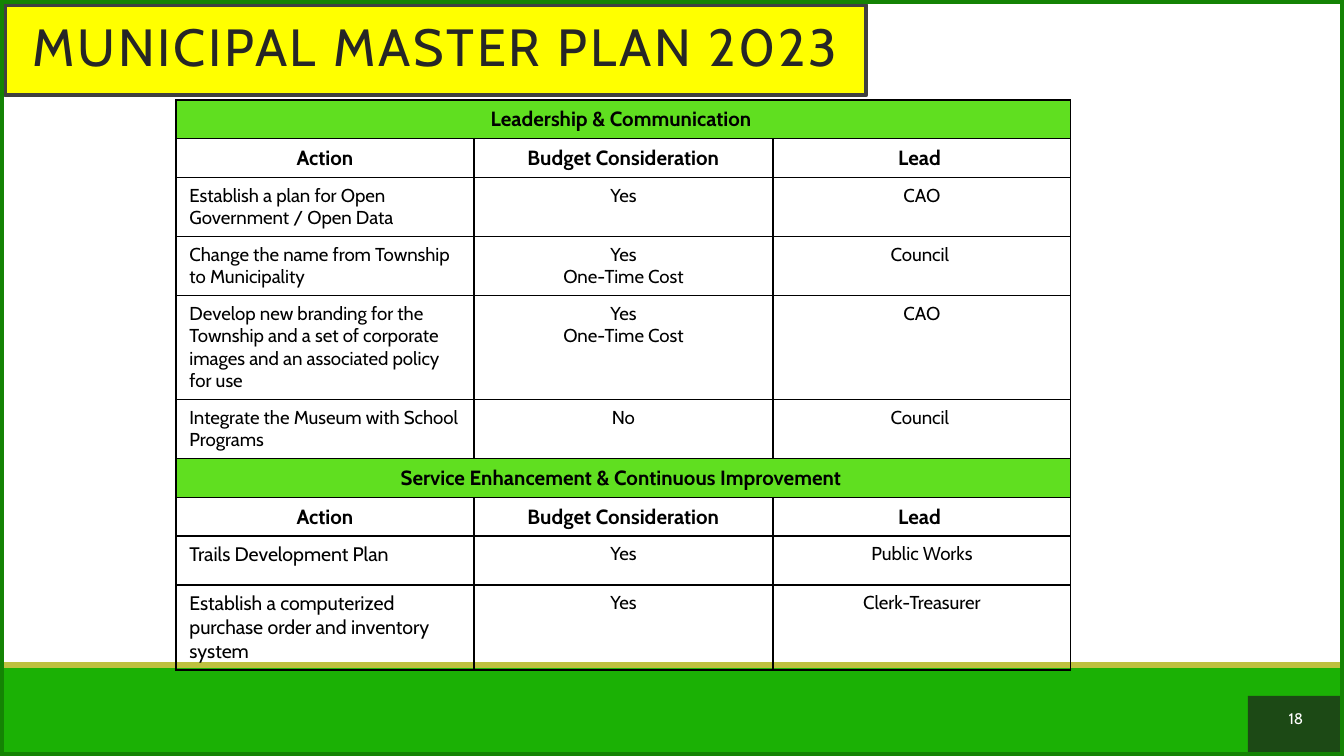
from lxml import etree
from pptx import Presentation
from pptx.dml.color import RGBColor
from pptx.enum.shapes import MSO_CONNECTOR, MSO_SHAPE
from pptx.enum.text import MSO_ANCHOR, PP_ALIGN
from pptx.oxml.ns import qn
from pptx.util import Emu, Pt

RECT = MSO_SHAPE.RECTANGLE
STRAIGHT = MSO_CONNECTOR.STRAIGHT
LEFT, CENTER = PP_ALIGN.LEFT, PP_ALIGN.CENTER
TOP, MIDDLE = MSO_ANCHOR.TOP, MSO_ANCHOR.MIDDLE

W, H = 1344, 756
INSET = 13
FONT = "Cabin"
BLACK, WHITE, BAND = "000000", "FFFFFF", "60DF20"

COL_WIDTHS = [298, 299, 298]
ROW_HEIGHTS = [38, 39, 58, 59, 104, 59, 39, 38, 49, 85]
HEADINGS = ["Action", "Budget Consideration", "Lead "]
# Each section: title, size of the action text, rows
SECTIONS = [
    ("Leadership & Communication ", 10, [
        ("Establish a plan for Open Government / Open Data", "Yes", "CAO"),
        ("Change the name from Township to Municipality",
         "Yes\nOne-Time Cost", "Council "),
        ("Develop new branding for the Township and a set of corporate "
         "images and an associated policy for use",
         "Yes\nOne-Time Cost", "CAO"),
        ("Integrate the Museum with School Programs", "No", "Council "),
    ]),
    ("Service Enhancement & Continuous Improvement ", 10.5, [
        ("Trails Development Plan", "Yes", "Public Works"),
        ("Establish a computerized purchase order and inventory system",
         "Yes", "Clerk-Treasurer"),
    ]),
]


def px(n):
    return Emu(round(n * 914400 / 134.4))


def rgb(color):
    return RGBColor.from_string(color)


def write(tf, text, size=10, color=BLACK, bold=False, align=CENTER,
          line_spacing=None, tracking=None):
    """Fill a text frame, one paragraph for each line of text."""
    tf.word_wrap = True
    for i, line in enumerate(text.split("\n")):
        p = tf.add_paragraph() if i else tf.paragraphs[0]
        p.alignment = align
        if line_spacing:
            p.line_spacing = line_spacing
        r = p.add_run()
        r.text = line
        r.font.name = FONT
        r.font.size = Pt(size)
        r.font.bold = bold
        r.font.color.rgb = rgb(color)
        if tracking:
            r.font._element.set("spc", str(tracking))


def add_rect(s, box, fill=None, line=None, line_width=1, opacity=None):
    sp = s.shapes.add_shape(RECT, *map(px, box))
    sp.shadow.inherit = False
    if fill:
        sp.fill.solid()
        sp.fill.fore_color.rgb = rgb(fill)
    else:
        sp.fill.background()
    if opacity:
        clr = sp._element.spPr.find(qn("a:solidFill"))[0]
        etree.SubElement(clr, qn("a:alpha"), val=str(opacity * 1000))
    if line:
        sp.line.color.rgb = rgb(line)
        sp.line.width = Pt(line_width)
    else:
        sp.line.fill.background()
    tf = sp.text_frame
    tf.margin_left = tf.margin_right = px(INSET)
    tf.margin_top = tf.margin_bottom = px(INSET)
    return sp


def add_footer(s, x, y, w, h):
    """Green band with the page number in its lower right corner."""
    add_rect(s, (x, y, w, h), fill="1BB105")
    badge = add_rect(s, (x + w - 96, y + 31, 96, h - 31),
                     fill="1D1D1D", opacity=70)
    badge.text_frame.vertical_anchor = TOP
    write(badge.text_frame, "18", size=8.2, color=WHITE)


def add_rule(s, x, y, w):
    ln = s.shapes.add_connector(STRAIGHT, px(x), px(y), px(x + w), px(y))
    ln.line.color.rgb = rgb("BEC13F")
    ln.line.width = Pt(3.5)
    etree.SubElement(ln._element.spPr, qn("a:effectLst"))


def add_title(s, box):
    sp = add_rect(s, box, fill="FFFF00", line="404040", line_width=2.5)
    sp.text_frame.vertical_anchor = MIDDLE
    write(sp.text_frame, "MUNICIPAL MASTER PLAN 2023", size=28,
          color="262626", line_spacing=0.9, tracking=150)


def style_cell(cell, fill=None):
    """Give a cell thin black borders and its own fill."""
    tcPr = cell._tc.get_or_add_tcPr()
    for side in ("lnL", "lnR", "lnT", "lnB"):
        ln = etree.SubElement(tcPr, qn(f"a:{side}"), w=str(Pt(0.75)))
        solid = etree.SubElement(ln, qn("a:solidFill"))
        etree.SubElement(solid, qn("a:srgbClr"), val=BLACK)
    if fill:
        cell.fill.solid()
        cell.fill.fore_color.rgb = rgb(fill)
    else:
        cell.fill.background()


def add_plan_table(s, x, y):
    frame = s.shapes.add_table(
        len(ROW_HEIGHTS), len(COL_WIDTHS), px(x), px(y),
        px(sum(COL_WIDTHS)), px(sum(ROW_HEIGHTS)))
    table = frame.table
    table.first_row = table.horz_banding = False
    for col, width in zip(table.columns, COL_WIDTHS):
        col.width = px(width)
    for row, height in zip(table.rows, ROW_HEIGHTS):
        row.height = px(height)

    top = 0
    for title, action_size, rows in SECTIONS:
        for cell in table.rows[top].cells:
            style_cell(cell, BAND)
        table.cell(top, 0).merge(table.cell(top, len(COL_WIDTHS) - 1))
        write(table.cell(top, 0).text_frame, title, size=11, bold=True)
        for i, texts in enumerate([HEADINGS, *rows]):
            for j, text in enumerate(texts):
                cell = table.cell(top + 1 + i, j)
                style_cell(cell)
                if i == 0:
                    write(cell.text_frame, text, size=11, bold=True)
                elif j == 0:
                    write(cell.text_frame, text, size=action_size, align=LEFT)
                else:
                    write(cell.text_frame, text)
        top += len(rows) + 2


def main():
    prs = Presentation()
    prs.slide_width, prs.slide_height = px(W), px(H)
    s = prs.slides.add_slide(prs.slide_layouts[6])
    s.background.fill.solid()
    s.background.fill.fore_color.rgb = rgb(WHITE)

    add_footer(s, 4, 665, W - 4, H - 665)
    add_title(s, (5, 5, 861, 90))
    add_rule(s, 4, 665, W - 4)
    add_rect(s, (0, 0, W, H), line="148304", line_width=4)
    add_plan_table(s, 176, 100)
    prs.save("out.pptx")


if __name__ == "__main__":
    main()
